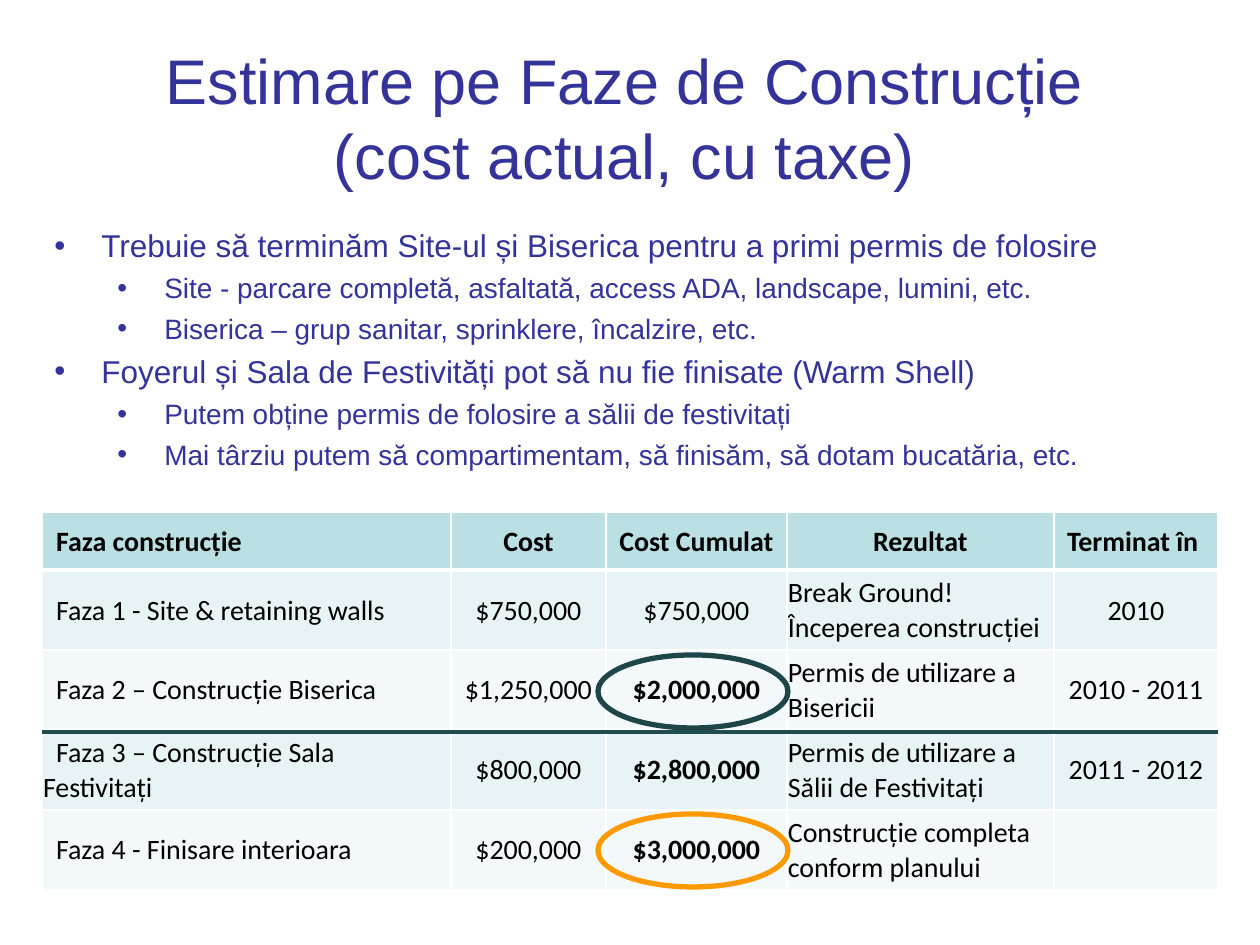
"""Build the slide with construction phase costs: title, bullets, table and highlights."""
from lxml import etree
from pptx import Presentation
from pptx.dml.color import RGBColor
from pptx.enum.shapes import MSO_CONNECTOR, MSO_SHAPE
from pptx.enum.text import MSO_ANCHOR, MSO_AUTO_SIZE, PP_ALIGN
from pptx.oxml.ns import qn
from pptx.util import Pt

LEFT, CENTER = PP_ALIGN.LEFT, PP_ALIGN.CENTER
MIDDLE = MSO_ANCHOR.MIDDLE
NO_FIT = MSO_AUTO_SIZE.NONE
STRAIGHT = MSO_CONNECTOR.STRAIGHT
OVAL = MSO_SHAPE.OVAL
SCALE = 914400 / 126
COLORS = {
    "text": "333399", "cell_text": "000000", "border": "FFFFFF",
    "header": "BBE0E3", "odd": "E7F3F4", "even": "F3F9FA",
    "divider": "224B50", "dark_ring": "1E4649", "orange_ring": "FF9900",
}


def px(*values):
    emu = [round(v * SCALE) for v in values]
    return emu if len(emu) > 1 else emu[0]


def add_run(p, text, size, font, color, bold=False):
    r = p.add_run()
    r.text = text
    r.font.size = Pt(size)
    r.font.name = font
    r.font.bold = bold
    r.font.color.rgb = RGBColor.from_string(COLORS[color])


prs = Presentation()
prs.slide_width, prs.slide_height = px(1260, 945)
s = prs.slides.add_slide(prs.slide_layouts[5])

title = s.shapes.title
title.left, title.top, title.width, title.height = px(21, 38, 1207, 158)
tf = title.text_frame
tf.word_wrap = True
tf.auto_size = NO_FIT
tf.vertical_anchor = MIDDLE
p = tf.paragraphs[0]
p.alignment = CENTER
add_run(p, "Estimare pe Faze de Construcție", 36, "Arial", "text")
p.add_line_break()
add_run(p, "(cost actual, cu taxe)", 36, "Arial", "text")

ROWS = [
    ("Faza construcție", "Cost", "Cost Cumulat", "Rezultat", "Terminat în "),
    ("Faza 1 - Site & retaining walls", "$750,000", "$750,000",
     "Break Ground!\nÎnceperea construcției", "2010"),
    ("Faza 2 – Construcție Biserica", "$1,250,000", "$2,000,000",
     "Permis de utilizare a Bisericii", "2010 - 2011"),
    ("Faza 3 – Construcție Sala Festivitați", "$800,000", "$2,800,000",
     "Permis de utilizare a Sălii de Festivitați", "2011 - 2012"),
    ("Faza 4 - Finisare interioara", "$200,000", "$3,000,000",
     "Construcție completa conform planului", ""),
]
COL_WIDTHS = [409, 155, 181, 267, 164]
ROW_HEIGHTS = [58, 80, 80, 80, 80]

table = s.shapes.add_table(5, 5, *px(42, 512, 1176, 378)).table
table.first_row = table.horz_banding = False
for col, width in zip(table.columns, COL_WIDTHS):
    col.width = px(width)
for row, height in zip(table.rows, ROW_HEIGHTS):
    row.height = px(height)

for i, row in enumerate(ROWS):
    for j, text in enumerate(row):
        cell = table.cell(i, j)
        cell.vertical_anchor = MIDDLE
        cell.margin_left = cell.margin_right = cell.margin_top = px(1)
        cell.margin_bottom = 0
        tcPr = cell._tc.get_or_add_tcPr()
        for side in "LRTB":
            thick = (i, side) in ((0, "B"), (1, "T"))
            ln = etree.SubElement(tcPr, qn(f"a:ln{side}"), w=str(Pt(3 if thick else 1)))
            fill = etree.SubElement(ln, qn("a:solidFill"))
            etree.SubElement(fill, qn("a:srgbClr"), val=COLORS["border"])
        cell.fill.solid()
        shade = "header" if i == 0 else "odd" if i % 2 else "even"
        cell.fill.fore_color.rgb = RGBColor.from_string(COLORS[shade])
        if not text:
            continue
        p = cell.text_frame.paragraphs[0]
        p.alignment = LEFT if j == 0 or (j == 3 and i > 0) else CENTER
        if j == 0:
            p._p.get_or_add_pPr().set("indent", str(px(13)))
        bold = i == 0 or (j == 2 and i > 1)
        for n, line in enumerate(text.split("\n")):
            if n:
                p.add_line_break()
            add_run(p, line, 16, "Calibri", "cell_text", bold)

divider = s.shapes.add_connector(STRAIGHT, *px(42, 732, 1218, 732))
divider.line.color.rgb = RGBColor.from_string(COLORS["divider"])
divider.line.width = Pt(2.5)
etree.SubElement(divider._element.spPr, qn("a:effectLst"))

BULLETS = [
    (0, "Trebuie să terminăm Site-ul și Biserica pentru a primi permis de folosire"),
    (1, "Site - parcare completă, asfaltată, access ADA, landscape, lumini, etc."),
    (1, "Biserica – grup sanitar, sprinklere, încalzire, etc."),
    (0, "Foyerul și Sala de Festivități pot să nu fie finisate (Warm Shell)"),
    (1, "Putem obține permis de folosire a sălii de festivitați"),
    (1, "Mai târziu putem să compartimentam, să finisăm, să dotam bucatăria, etc."),
]
tf = s.shapes.add_textbox(*px(42, 220, 1176, 274)).text_frame
tf.word_wrap = True
for n, (level, text) in enumerate(BULLETS):
    p = tf.add_paragraph() if n else tf.paragraphs[0]
    p.level = level
    p.space_before = Pt(4)
    pPr = p._p.get_or_add_pPr()
    pPr.set("marL", str(px(47 + 63 * level)))
    pPr.set("indent", str(px(-47)))
    etree.SubElement(pPr, qn("a:buFont"), typeface="Arial")
    etree.SubElement(pPr, qn("a:buChar"), char="•")
    add_run(p, text, 18 - 2 * level, "Arial", "text")

for top, color in ((814, "orange_ring"), (655, "dark_ring")):
    ring = s.shapes.add_shape(OVAL, *px(598, top, 190, 73))
    ring.shadow.inherit = False
    ring.fill.background()
    ring.line.color.rgb = RGBColor.from_string(COLORS[color])
    ring.line.width = Pt(3)

prs.save("out.pptx")
